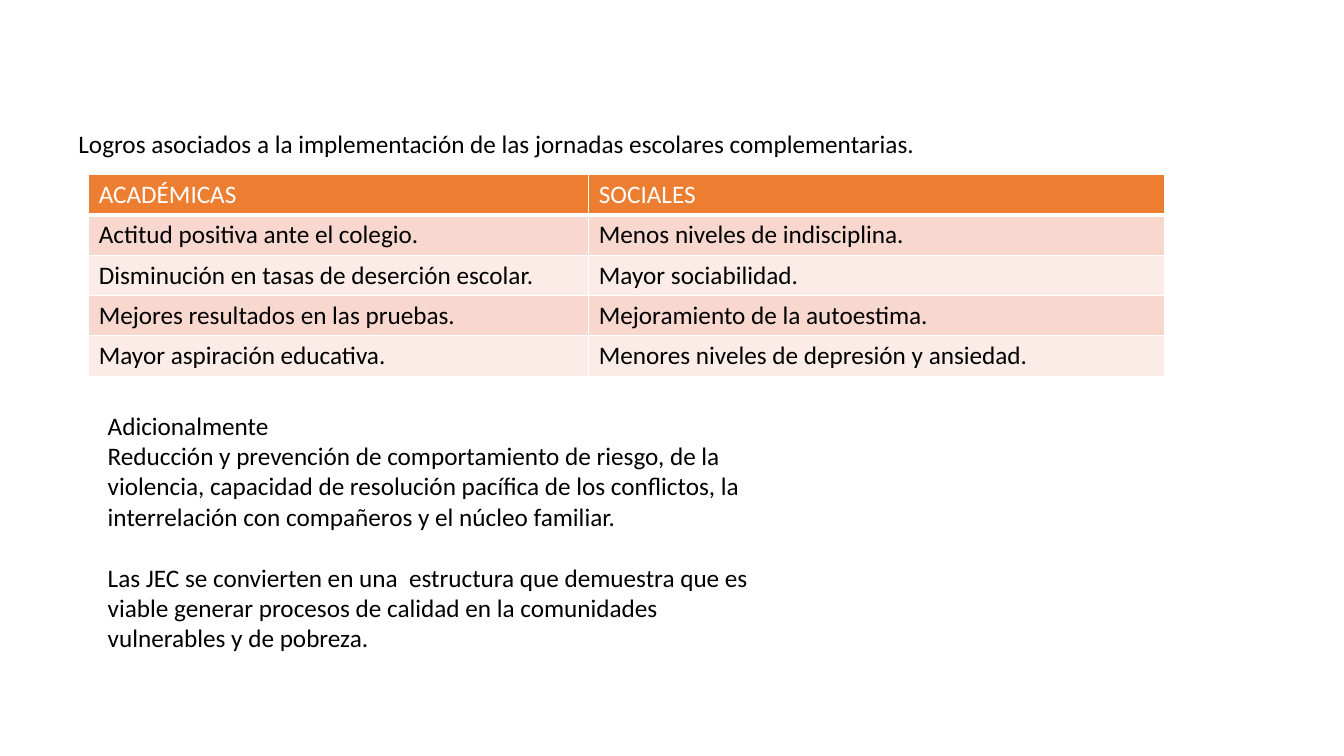
import pptx
import pptx.dml.color
import pptx.enum.text
import pptx.oxml
import pptx.oxml.ns
import pptx.util

# Content
HEADING = "Logros asociados a la implementación de las jornadas escolares complementarias."
ACHIEVEMENTS = [
    ("ACADÉMICAS", "SOCIALES"),
    ("Actitud positiva ante el colegio.", "Menos niveles de indisciplina."),
    ("Disminución en tasas de deserción escolar.", "Mayor sociabilidad."),
    ("Mejores resultados en las pruebas.", "Mejoramiento de la autoestima."),
    ("Mayor aspiración educativa.", "Menores niveles de depresión y ansiedad."),
]
# Each paragraph with the space before it, in points
ADDITIONAL = [
    ("Adicionalmente", 0),
    ("Reducción y prevención de comportamiento de riesgo, de la violencia, "
     "capacidad de resolución pacífica de los conflictos, la interrelación con "
     "compañeros y el núcleo familiar.", 0),
    ("Las JEC se convierten en una  estructura que demuestra que es viable generar "
     "procesos de calidad en la comunidades vulnerables y de pobreza.", 22),
]

# Layout in inches, format in points
SLIDE_SIZE = (13.33, 7.5)
HEADING_BOX = (0.68, 1.22, 8.7, 0.4)
ADDITIONAL_BOX = (0.97, 4.02, 6.61, 2.52)
TABLE_LEFT, TABLE_TOP = 0.88, 1.73
COLUMN_WIDTHS = (4.96, 5.71)
ROW_HEIGHT = 0.4
COLORS = {"text": "000000", "light": "FFFFFF", "header": "ED7D31",
          "odd": "F8D7CE", "even": "FCECE8"}
FONT = {"name": "Calibri", "size": pptx.util.Pt(18), "bold": False}
BORDER, HEADER_BORDER = 1, 3


def inches(values):
    return [pptx.util.Inches(value) for value in values]


def color(name):
    return pptx.dml.color.RGBColor.from_string(COLORS[name])


def write(paragraph, text, color_name="text"):
    run = paragraph.add_run()
    run.text = text
    for attribute, value in FONT.items():
        setattr(run.font, attribute, value)
    run.font.color.rgb = color(color_name)


def add_text(slide, box, paragraphs):
    frame = slide.shapes.add_textbox(*inches(box)).text_frame
    frame.word_wrap = True
    frame.auto_size = pptx.enum.text.MSO_AUTO_SIZE.SHAPE_TO_FIT_TEXT
    for index, (text, space) in enumerate(paragraphs):
        paragraph = frame.add_paragraph() if index else frame.paragraphs[0]
        if space:
            paragraph.space_before = pptx.util.Pt(space)
        write(paragraph, text)


def add_borders(cell, bottom):
    properties = cell._tc.get_or_add_tcPr()
    widths = {"lnL": BORDER, "lnR": BORDER, "lnT": BORDER, "lnB": bottom}
    for position, (side, width) in enumerate(widths.items()):
        line = pptx.oxml.parse_xml(
            f'<a:{side} {pptx.oxml.ns.nsdecls("a")} w="{pptx.util.Pt(width)}">'
            f'<a:solidFill><a:srgbClr val="{COLORS["light"]}"/></a:solidFill></a:{side}>')
        properties.insert(position, line)


def add_achievements(slide):
    rows, columns = len(ACHIEVEMENTS), len(COLUMN_WIDTHS)
    box = (TABLE_LEFT, TABLE_TOP, sum(COLUMN_WIDTHS), rows * ROW_HEIGHT)
    table = slide.shapes.add_table(rows, columns, *inches(box)).table
    table.horz_banding = False
    for column, width in zip(table.columns, inches(COLUMN_WIDTHS)):
        column.width = width
    for row, texts in enumerate(ACHIEVEMENTS):
        fill = ("odd" if row % 2 else "even") if row else "header"
        for column, text in enumerate(texts):
            cell = table.cell(row, column)
            cell.fill.solid()
            cell.fill.fore_color.rgb = color(fill)
            add_borders(cell, BORDER if row else HEADER_BORDER)
            write(cell.text_frame.paragraphs[0], text, "text" if row else "light")


def main():
    presentation = pptx.Presentation()
    presentation.slide_width, presentation.slide_height = inches(SLIDE_SIZE)
    slide = presentation.slides.add_slide(presentation.slide_layouts[6])
    add_text(slide, HEADING_BOX, [(HEADING, 0)])
    add_achievements(slide)
    add_text(slide, ADDITIONAL_BOX, ADDITIONAL)
    presentation.save("out.pptx")


if __name__ == "__main__":
    main()
